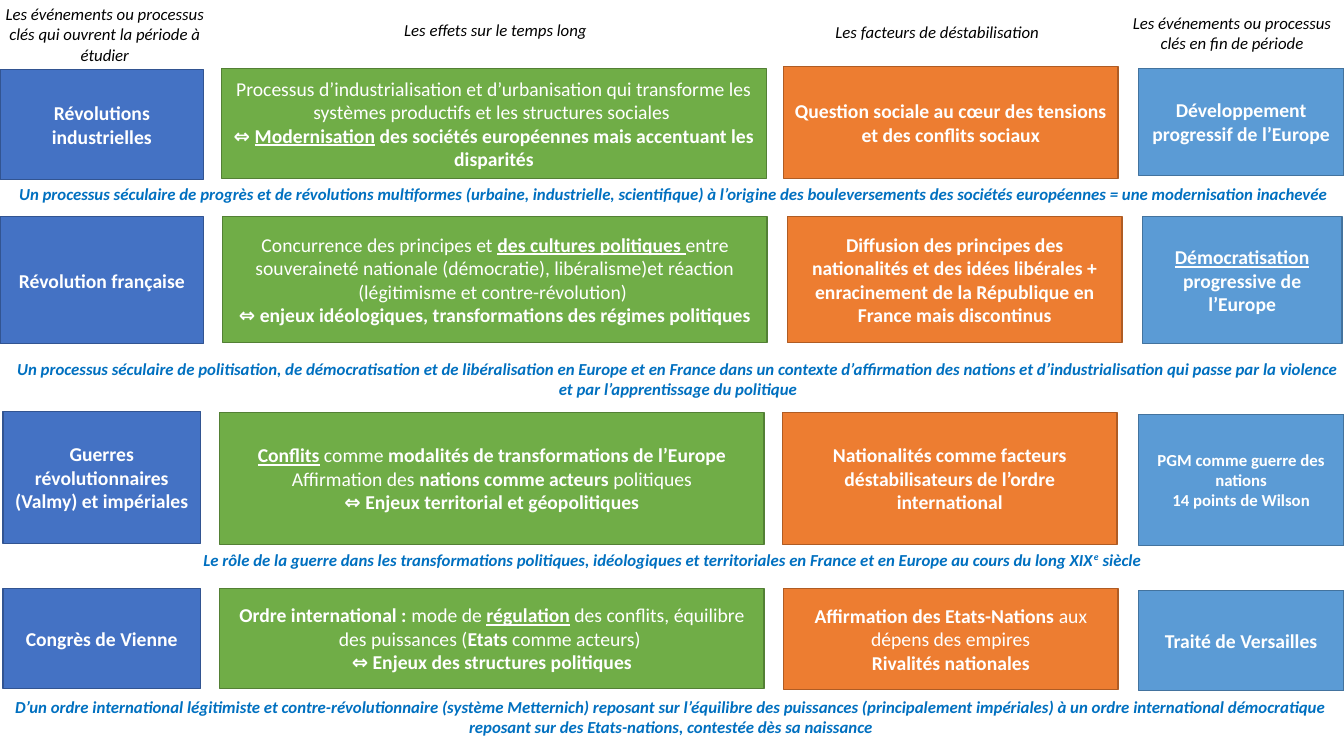
import pptx
import pptx.dml.color
import pptx.enum.shapes
import pptx.enum.text
import pptx.util

Inches = pptx.util.Inches
COLORS = {"header": "000000", "summary": "0070C0", "box_text": "FFFFFF"}
# Fill and outline of each column, from left to right
COLUMNS = [("4472C4", "325491"), ("70AD47", "538035"),
           ("ED7D31", "AF5C24"), ("5B9BD5", "43739E")]
BOX_SIZE = 14
SMALL_SIZE = 12

# Frames are (left, top, width, height) in inches.
# A text is a list of paragraphs; a paragraph is a list of (words, style) runs.
# Style letters: b bold, i italic, u underlined, s superscript.
HEADERS = [
    ((-0.13, -0.01, 2.34, 0.71), "Les événements ou processus clés qui ouvrent la période à étudier"),
    ((2.46, 0.15, 4.91, 0.3), "Les effets sur le temps long"),
    ((6.86, 0.17, 4.91, 0.3), "Les facteurs de déstabilisation "),
    ((11.13, 0.08, 2.18, 0.5), "Les événements ou processus clés en fin de période"),
]

ROWS = [
    [
        ((0, 0.69, 2.02, 1.09), [[("Révolutions industrielles", "b")]]),
        ((2.2, 0.68, 5.4, 1.09), [
            [("Processus d’industrialisation et d’urbanisation qui transforme les "
              "systèmes productifs et les structures sociales ", "")],
            [("⇔ ", "b"), ("Modernisation", "bu"),
             (" des sociétés européennes mais accentuant les disparités", "b")]]),
        ((7.77, 0.66, 3.32, 1.11), [
            [("Question sociale au cœur des tensions et des conflits sociaux", "b")]]),
        ((11.29, 0.68, 2.04, 1.06), [[("Développement progressif de l’Europe", "b")]]),
    ],
    [
        ((0, 2.15, 2.02, 1.26), [[("Révolution française", "b")]]),
        ((2.21, 2.15, 5.4, 1.25), [
            [("Concurrence des principes et ", ""), ("des cultures politiques ", "bu"),
             ("entre souveraineté nationale (démocratie), libéralisme)et réaction "
              "(légitimisme et contre-révolution) ", "")],
            [("⇔ enjeux idéologiques, transformations des régimes politiques", "b")]]),
        ((7.81, 2.15, 3.32, 1.25), [
            [("Diffusion des principes des nationalités et des idées libérales + "
              "enracinement de la République en France mais discontinus", "b")]]),
        ((11.33, 2.15, 1.98, 1.26), [
            [("Démocratisation", "bu"), (" progressive de l’Europe", "b")]]),
    ],
    [
        ((0.03, 4.08, 1.96, 1.31), [[("Guerres révolutionnaires (Valmy) et impériales", "b")]]),
        ((2.18, 4.09, 5.4, 1.31), [
            [("Conflits", "bu"), (" comme ", ""),
             ("modalités de transformations de l’Europe", "b")],
            [("Affirmation des ", ""), ("nations comme acteurs", "b"), (" politiques", "")],
            [("⇔ Enjeux territorial et géopolitiques", "b")]]),
        ((7.76, 4.09, 3.32, 1.31), [
            [("Nationalités comme facteurs déstabilisateurs de l’ordre international", "b")]]),
        ((11.29, 4.11, 2.04, 1.3), [
            [("PGM comme guerre des nations", "b")], [("14 points de Wilson", "b")]], SMALL_SIZE),
    ],
    [
        ((0.03, 5.84, 1.96, 0.99), [[("Congrès de Vienne", "b")]]),
        ((2.18, 5.84, 5.4, 0.99), [
            [("Ordre international : ", "b"), ("mode de ", ""), ("régulation", "bu"),
             (" des conflits, équilibre des puissances (", ""), ("Etats", "b"),
             (" comme acteurs) ", "")],
            [("⇔ Enjeux des structures politiques", "b")]]),
        ((7.77, 5.84, 3.32, 1), [
            [("Affirmation des Etats-Nations ", "b"), ("aux dépens des empires", "")],
            [("Rivalités nationales", "b")]]),
        ((11.29, 5.86, 2.04, 0.99), [[("Traité de Versailles", "b")]]),
    ],
]

SUMMARIES = [
    ((0, 1.77, 13.37, 0.3), [
        ("Un processus séculaire de progrès et de révolutions multiformes (urbaine, "
         "industrielle, scientifique) à l’origine des bouleversements des sociétés "
         "européennes = une modernisation inachevée", "bi")]),
    ((0.07, 3.51, 13.31, 0.5), [
        ("Un processus séculaire de politisation, de démocratisation et de libéralisation "
         "en Europe et en France dans un contexte d’affirmation des nations et "
         "d’industrialisation qui passe par la violence et par l’apprentissage du politique", "bi")]),
    ((0.03, 5.4, 13.31, 0.3), [
        ("Le rôle de la guerre dans les transformations politiques, idéologiques et "
         "territoriales en France et en Europe au cours du long XIX", "bi"),
        ("e", "bis"), (" siècle ", "bi")]),
    ((0, 6.86, 13.31, 0.5), [
        ("D’un ordre international légitimiste et contre-révolutionnaire (système Metternich) "
         "reposant sur l’équilibre des puissances (principalement impériales) à un ordre "
         "international démocratique reposant sur des Etats-nations, contestée dès sa "
         "naissance", "bi")]),
]


def rgb(value):
    return pptx.dml.color.RGBColor.from_string(value)


def write_text(text_frame, paragraphs, size, color):
    text_frame.word_wrap = True
    for index, runs in enumerate(paragraphs):
        paragraph = text_frame.paragraphs[0] if index == 0 else text_frame.add_paragraph()
        paragraph.alignment = pptx.enum.text.PP_ALIGN.CENTER
        for words, style in runs:
            run = paragraph.add_run()
            run.text = words
            font = run.font
            font.name = "Calibri"
            font.size = pptx.util.Pt(size)
            font.color.rgb = rgb(color)
            font.bold = "b" in style
            font.italic = "i" in style
            font.underline = "u" in style
            if "s" in style:
                run._r.get_or_add_rPr().set("baseline", "30000")


def add_box(slide, frame, paragraphs, fill, outline, size=BOX_SIZE):
    shape = slide.shapes.add_shape(
        pptx.enum.shapes.MSO_SHAPE.RECTANGLE, *map(Inches, frame))
    shape.shadow.inherit = False
    shape.fill.solid()
    shape.fill.fore_color.rgb = rgb(fill)
    shape.line.color.rgb = rgb(outline)
    shape.line.width = pptx.util.Pt(1)
    shape.text_frame.vertical_anchor = pptx.enum.text.MSO_ANCHOR.MIDDLE
    write_text(shape.text_frame, paragraphs, size, COLORS["box_text"])


def add_label(slide, frame, runs, color):
    text_frame = slide.shapes.add_textbox(*map(Inches, frame)).text_frame
    text_frame.auto_size = pptx.enum.text.MSO_AUTO_SIZE.SHAPE_TO_FIT_TEXT
    write_text(text_frame, [runs], SMALL_SIZE, color)


def main():
    presentation = pptx.Presentation()
    presentation.slide_width = Inches(13.33)
    presentation.slide_height = Inches(7.5)
    blank_layout = presentation.slide_layouts[6]
    slide = presentation.slides.add_slide(blank_layout)

    for row in ROWS:
        for (frame, paragraphs, *size), (fill, outline) in zip(row, COLUMNS):
            add_box(slide, frame, paragraphs, fill, outline, *size)
    for frame, runs in SUMMARIES:
        add_label(slide, frame, runs, COLORS["summary"])
    for frame, words in HEADERS:
        add_label(slide, frame, [(words, "i")], COLORS["header"])

    presentation.save("out.pptx")


if __name__ == "__main__":
    main()
